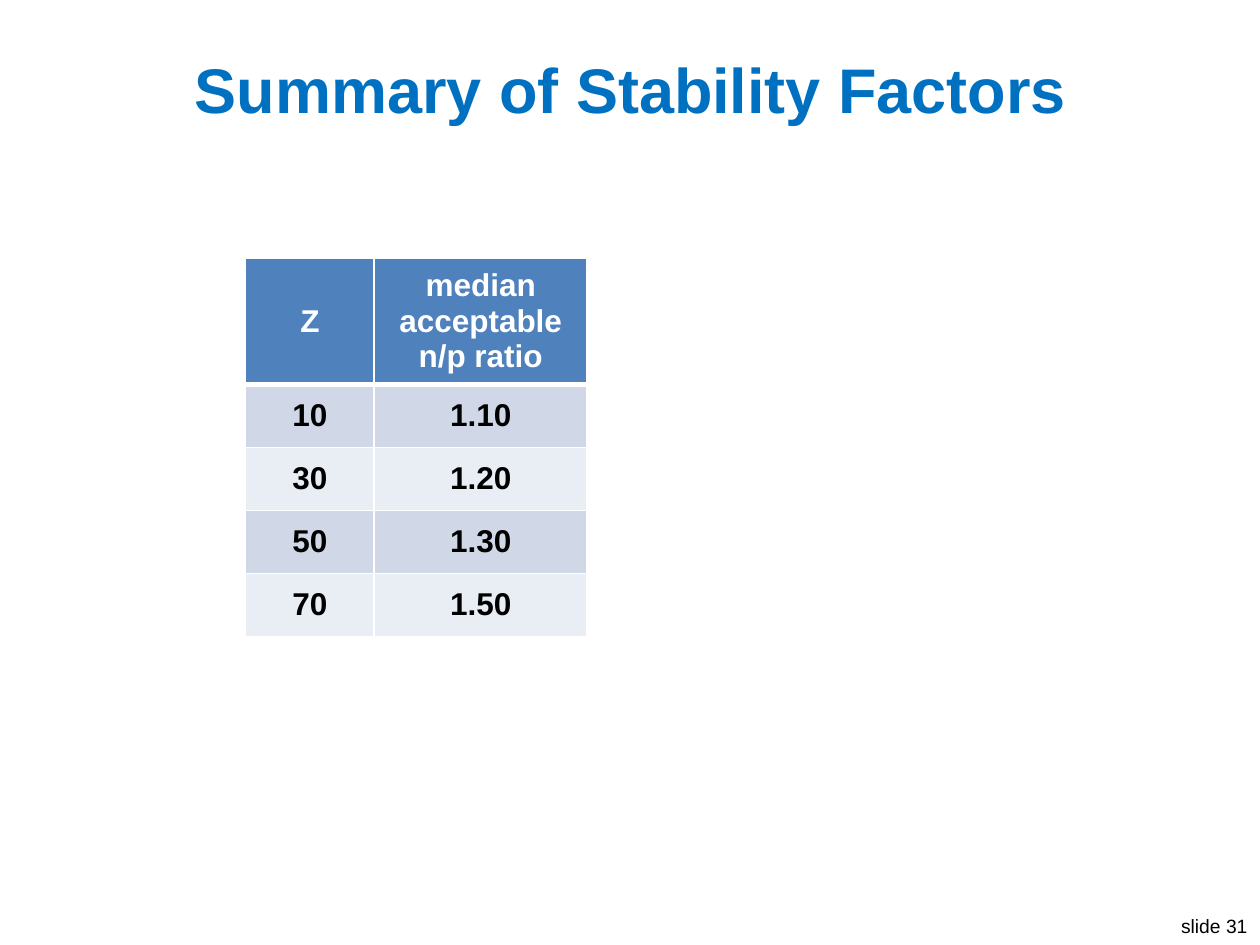
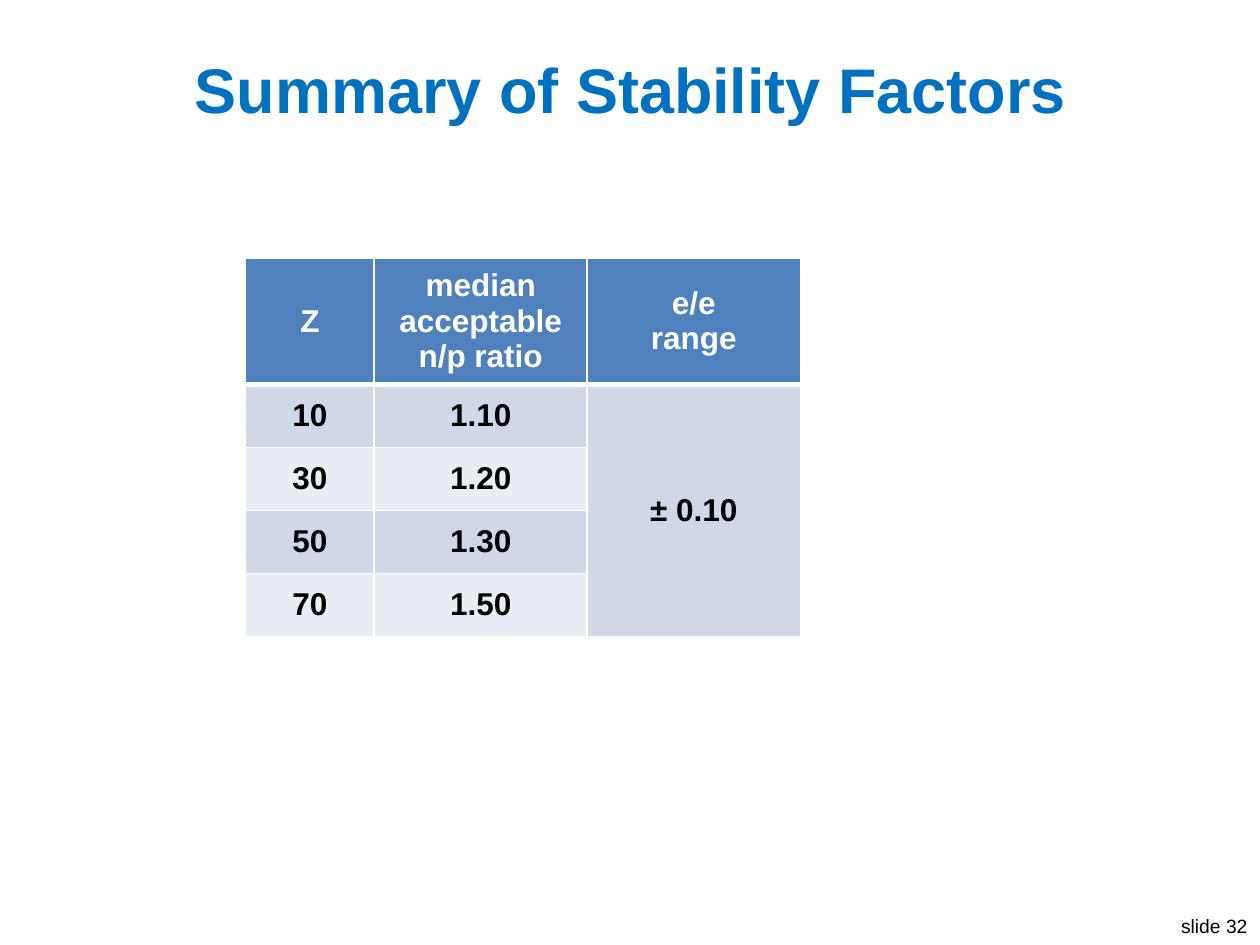
from lxml import etree
from pptx import Presentation
from pptx.dml.color import RGBColor
from pptx.enum.text import MSO_ANCHOR, PP_ALIGN
from pptx.oxml.ns import qn
from pptx.util import Pt

MIDDLE = MSO_ANCHOR.MIDDLE
CENTER = PP_ALIGN.CENTER
RIGHT = PP_ALIGN.RIGHT

FONT = "Arial"
WHITE, BLACK, BLUE = "FFFFFF", "000000", "0070C0"
HEAD, DARK, LIGHT = "4F81BD", "D0D8E8", "E9EDF4"
TITLE = "Summary of Stability Factors"
TITLE_BOX = (49.7, 21.6, 621.4, 57.6)
FOOT_BOX = (666, 519.1, 54, 20.9)
GRID_AT = (140.4, 147.6)
WIDTHS = (73.4, 121.8, 121.8)
ROW = 36
RATIOS = [
    ("Z", "median\nacceptable\nn/p ratio"),
    ("10", "1.10"),
    ("30", "1.20"),
    ("50", "1.30"),
    ("70", "1.50"),
]
RANGE = ("e/e\nrange", "± 0.10", "", "", "")


def color(code):
    return RGBColor.from_string(code)


def write(frame, text, size, code, align, bold=False):
    frame.text = text
    for para in frame.paragraphs:
        para.alignment = align
        for run in para.runs:
            font = run.font
            font.name, font.size, font.bold = FONT, Pt(size), bold
            font.color.rgb = color(code)


def add_title(slide, box):
    title = slide.shapes.title
    title.left, title.top, title.width, title.height = map(Pt, box)
    title.text_frame.vertical_anchor = MIDDLE
    write(title.text_frame, TITLE, 36, BLUE, CENTER, True)


def add_foot(slide, box, number):
    frame = slide.shapes.add_textbox(*map(Pt, box)).text_frame
    frame.word_wrap = False
    write(frame, f"slide {number}", 11, BLACK, RIGHT)


def add_edges(cell, bottom):
    props = cell._tc.get_or_add_tcPr()
    for side, width in (("L", 1), ("R", 1), ("T", 1), ("B", bottom)):
        line = etree.SubElement(props, qn(f"a:ln{side}"), w=str(Pt(width)))
        fill = etree.SubElement(line, qn("a:solidFill"))
        etree.SubElement(fill, qn("a:srgbClr"), val=WHITE)


def style_cell(cell, text, row):
    is_head = row == 0
    add_edges(cell, 3 if is_head else 1)
    cell.fill.solid()
    band = DARK if row % 2 else LIGHT
    cell.fill.fore_color.rgb = color(HEAD if is_head else band)
    cell.vertical_anchor = MIDDLE
    write(cell.text_frame, text, 18, WHITE if is_head else BLACK, CENTER, True)


def add_grid(slide, left, top, rows, head):
    widths = WIDTHS[:len(rows[0])]
    heights = [head] + [ROW] * (len(rows) - 1)
    box = (left, top, sum(widths), sum(heights))
    table = slide.shapes.add_table(len(rows), len(widths), *map(Pt, box)).table
    for col, width in zip(table.columns, widths):
        col.width = Pt(width)
    for row, height in zip(table.rows, heights):
        row.height = Pt(height)
    for r, texts in enumerate(rows):
        for c, text in enumerate(texts):
            style_cell(table.cell(r, c), text, r)
    return table


def add_page(deck, number, rows, head):
    slide = deck.slides.add_slide(deck.slide_layouts[5])
    add_title(slide, TITLE_BOX)
    add_foot(slide, FOOT_BOX, number)
    return add_grid(slide, *GRID_AT, rows, head)


def main():
    deck = Presentation()
    deck.slide_width, deck.slide_height = Pt(720), Pt(540)
    add_page(deck, 31, RATIOS, 67)
    ranges = [pair + (text,) for pair, text in zip(RATIOS, RANGE)]
    table = add_page(deck, 32, ranges, 72)
    table.cell(1, 2).merge(table.cell(4, 2))
    deck.save("out.pptx")


if __name__ == "__main__":
    main()
